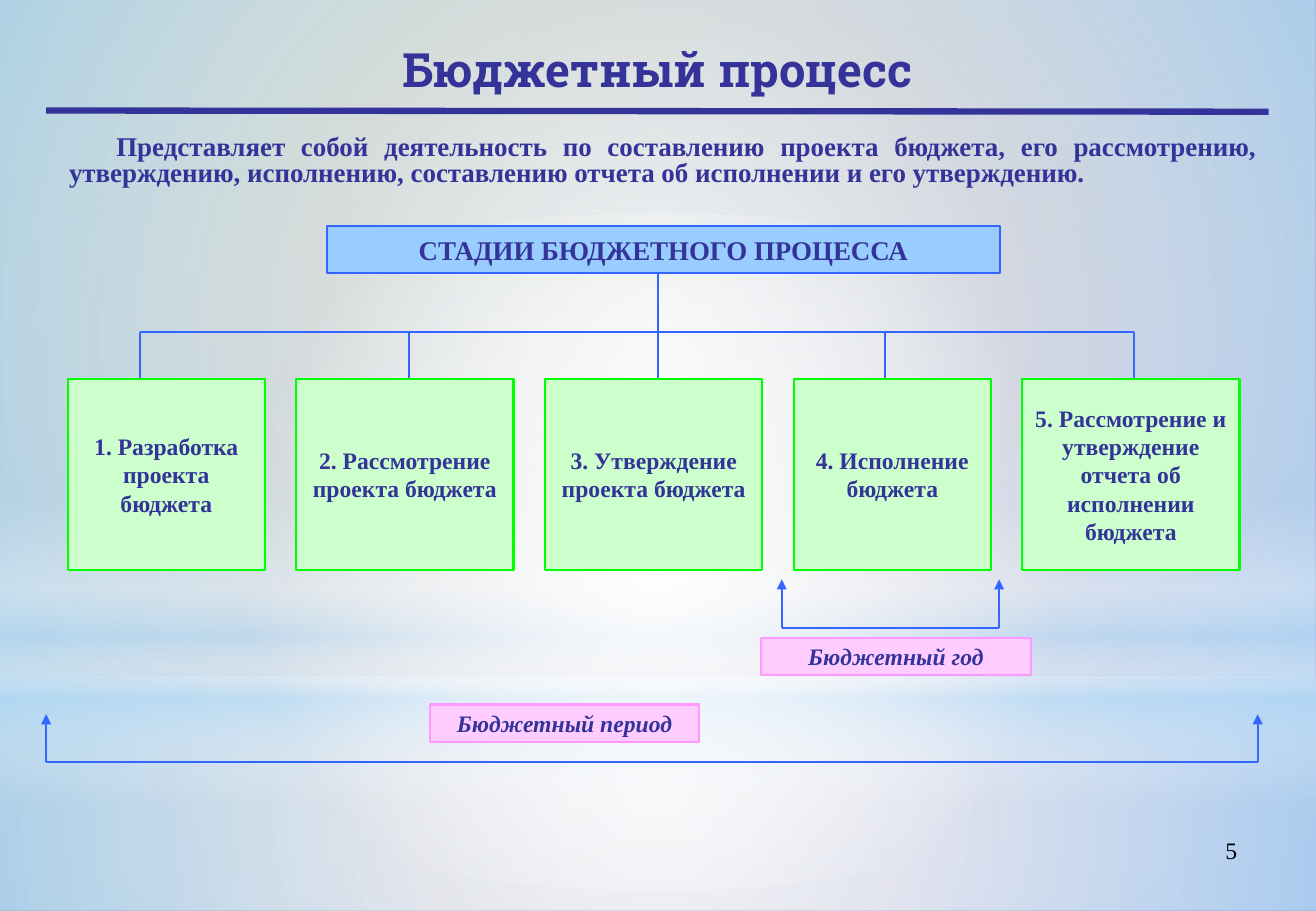
from lxml.etree import SubElement
from pptx import Presentation
from pptx.dml.color import RGBColor
from pptx.enum.shapes import MSO_CONNECTOR, MSO_SHAPE
from pptx.enum.text import MSO_ANCHOR, PP_ALIGN
from pptx.oxml.ns import qn
from pptx.util import Inches, Pt

INDIGO = RGBColor(0x33, 0x33, 0x99)
BLUE = RGBColor(0x33, 0x66, 0xFF)
SKY = RGBColor(0x99, 0xCC, 0xFF)
MINT = RGBColor(0xCC, 0xFF, 0xCC)
GREEN = RGBColor(0x00, 0xFF, 0x00)
PINK = RGBColor(0xFF, 0xCC, 0xFF)
ROSE = RGBColor(0xFF, 0x99, 0xFF)
BLACK = RGBColor(0x00, 0x00, 0x00)
SAGE = RGBColor(0x96, 0xAB, 0x94)
LAVENDER = RGBColor(0x84, 0x88, 0xC4)
WHITE = RGBColor(0xFF, 0xFF, 0xFF)
HAZE = RGBColor(0xB4, 0xDC, 0xFA)
SERIF = "Times New Roman"


def write(shape, text, size, align=PP_ALIGN.CENTER, anchor=MSO_ANCHOR.MIDDLE,
          color=INDIGO, name=SERIF, bold=True, italic=False, wrap=True):
    frame = shape.text_frame
    frame.word_wrap = wrap
    frame.vertical_anchor = anchor
    paragraph = frame.paragraphs[0]
    paragraph.text = text
    paragraph.alignment = align
    font = paragraph.runs[0].font
    font.color.rgb = color
    formats = {"size": Pt(size), "name": name, "bold": bold, "italic": italic}
    for attribute, value in formats.items():
        setattr(font, attribute, value)
    return paragraph


def draw_line(x1, y1, x2, y2, color=BLUE, width=1.25, arrow=False):
    line = slide.shapes.add_connector(
        MSO_CONNECTOR.STRAIGHT, Inches(x1), Inches(y1), Inches(x2), Inches(y2))
    line.line.color.rgb = color
    line.line.width = Pt(width)
    properties = line.element.spPr
    if arrow:
        SubElement(properties.find(qn("a:ln")), qn("a:tailEnd"), type="triangle")
    SubElement(properties, qn("a:effectLst"))


prs = Presentation()
prs.slide_width, prs.slide_height = Inches(10.84), Inches(7.5)
slide = prs.slides.add_slide(prs.slide_layouts[5])

# Background gradient
background = slide.background.fill
background.gradient()
background.gradient_angle = 315
for stop, color in zip(background.gradient_stops, (SAGE, LAVENDER)):
    stop.color.rgb = color

# Translucent glow: kind, top, height, radial, stops (position, colour, opacity)
glows = [
    (MSO_SHAPE.RECTANGLE, 5.58, 1.92, True,
     [(0, WHITE, 91), (37, WHITE, 76), (100, HAZE, 79)]),
    (MSO_SHAPE.RECTANGLE, 0, 5.58, True,
     [(0, WHITE, 89), (48, WHITE, 62), (100, HAZE, 79)]),
    (MSO_SHAPE.RECTANGLE, 4.12, 2.5, False,
     [(0, WHITE, 0), (29, WHITE, 30), (45, HAZE, 40),
      (55, WHITE, 26), (65, HAZE, 60), (100, WHITE, 0)]),
    (MSO_SHAPE.OVAL, 1.75, 5.58, True, [(0, WHITE, 100), (56, WHITE, 0)]),
]
for kind, top, height, radial, stops in glows:
    glow = slide.shapes.add_shape(
        kind, 0, Inches(top), prs.slide_width, Inches(height))
    glow.shadow.inherit = False
    glow.line.fill.background()
    glow.fill.gradient()
    gradient = glow.element.spPr.find(qn("a:gradFill"))
    for child in list(gradient):
        gradient.remove(child)
    stop_list = SubElement(gradient, qn("a:gsLst"))
    for position, color, opacity in stops:
        stop = SubElement(stop_list, qn("a:gs"), pos=str(position * 1000))
        tint = SubElement(stop, qn("a:srgbClr"), val=str(color))
        SubElement(tint, qn("a:alpha"), val=str(opacity * 1000))
    if radial:
        circle = SubElement(gradient, qn("a:path"), {"path": "circle"})
        SubElement(circle, qn("a:fillToRect"),
                   {side: "50000" for side in "ltrb"})
    else:
        SubElement(gradient, qn("a:lin"), ang="5400000", scaled="0")

# Title, brought in front of the glow, and its rule
title = slide.shapes.title
title.element.getparent().append(title.element)
title.left, title.top = Inches(0.54), Inches(0.28)
title.width, title.height = Inches(9.75), Inches(0.57)
write(title, "Бюджетный процесс", 28, name="Roboto Slab")
draw_line(0.38, 0.91, 10.45, 0.92, INDIGO, 3.75)

# Definition
definition = slide.shapes.add_textbox(
    Inches(0.47), Inches(1.07), Inches(9.98), Inches(0.58))
paragraph = write(
    definition,
    "Представляет собой деятельность по составлению проекта бюджета, его "
    "рассмотрению, утверждению, исполнению, составлению отчета об исполнении "
    "и его утверждению.",
    16, PP_ALIGN.JUSTIFY, MSO_ANCHOR.TOP)
paragraph.line_spacing = 0.8
indent = definition.element.find(".//" + qn("a:pPr"))
indent.set("indent", str(Inches(0.39)))

# Connectors from the heading to the stages
stage_centers = [1.15, 3.37, 5.42, 7.29, 9.34]
draw_line(5.42, 2.25, 5.42, 2.73)
draw_line(stage_centers[0], 2.73, stage_centers[-1], 2.73)
for center in stage_centers:
    draw_line(center, 2.73, center, 3.12)

# Brackets with arrows for the budget year and the budget period
for left, right, top, base in [(6.44, 8.23, 4.77, 5.17), (0.38, 10.36, 5.88, 6.27)]:
    draw_line(left, base, right, base)
    for side in (left, right):
        draw_line(side, base, side, top, arrow=True)

# Boxes: left, top, width, height, fill, outline, text, font formats
boxes = [
    (2.69, 1.86, 5.55, 0.39, SKY, BLUE, "СТАДИИ БЮДЖЕТНОГО ПРОЦЕССА", {"size": 16}),
]
stages = [
    ("1. Разработка проекта бюджета", 1.62),
    ("2. Рассмотрение проекта бюджета", 1.79),
    ("3. Утверждение проекта бюджета", 1.79),
    ("4. Исполнение бюджета", 1.62),
    ("5. Рассмотрение и утверждение отчета об исполнении бюджета", 1.79),
]
stage_left = 0.56
for stage, width in stages:
    boxes.append((stage_left, 3.12, width, 1.57, MINT, GREEN, stage, {"size": 14}))
    stage_left += width + 0.26
for left, top, term in [(6.27, 5.25, "Бюджетный год"), (3.54, 5.8, "Бюджетный период")]:
    boxes.append((left, top, 2.22, 0.31, PINK, ROSE, term,
                  {"size": 14, "italic": True, "wrap": False}))

for left, top, width, height, fill, outline, text, formats in boxes:
    box = slide.shapes.add_shape(
        MSO_SHAPE.RECTANGLE, Inches(left), Inches(top), Inches(width), Inches(height))
    box.shadow.inherit = False
    box.fill.solid()
    box.fill.fore_color.rgb = fill
    box.line.color.rgb = outline
    box.line.width = Pt(1.25)
    write(box, text, **formats)

# Slide number
number = slide.shapes.add_textbox(
    Inches(7.76), Inches(6.83), Inches(2.53), Inches(0.52))
write(number, "5", 14, PP_ALIGN.RIGHT, MSO_ANCHOR.TOP, BLACK, bold=False)

prs.save("out.pptx")
